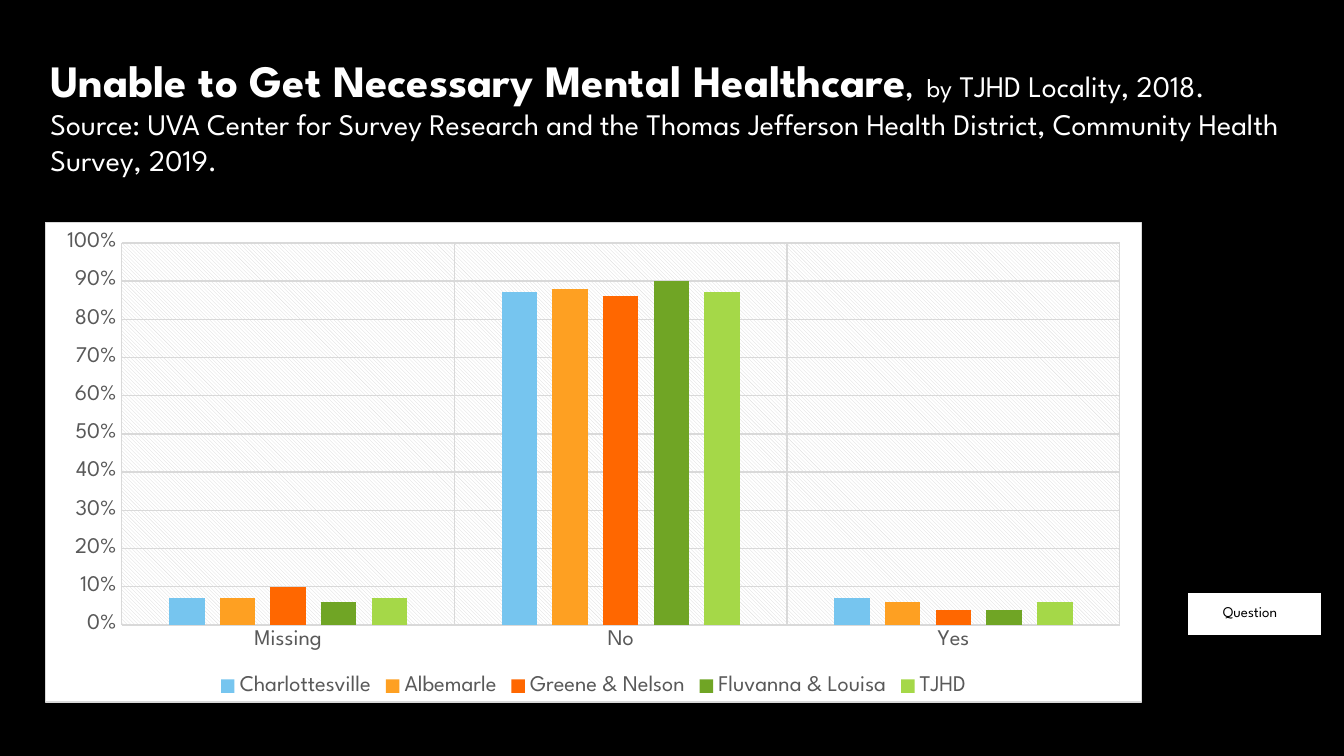
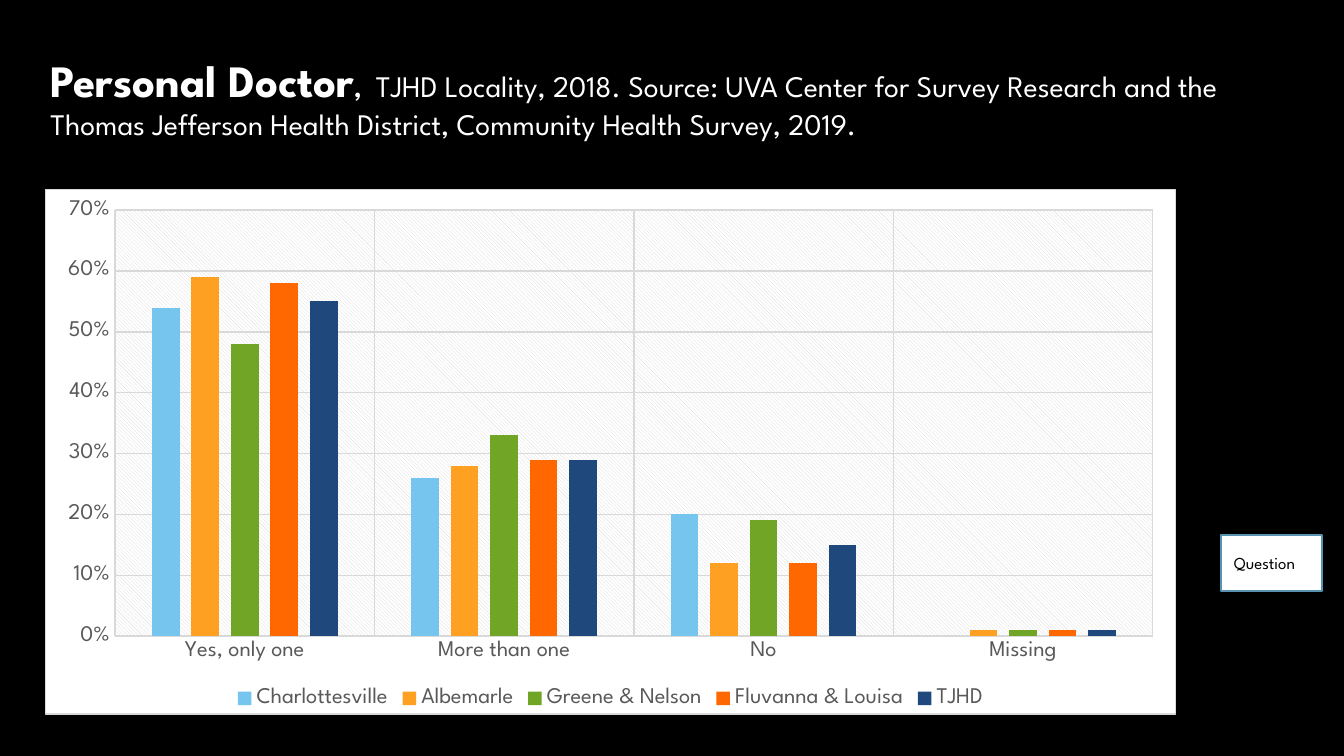
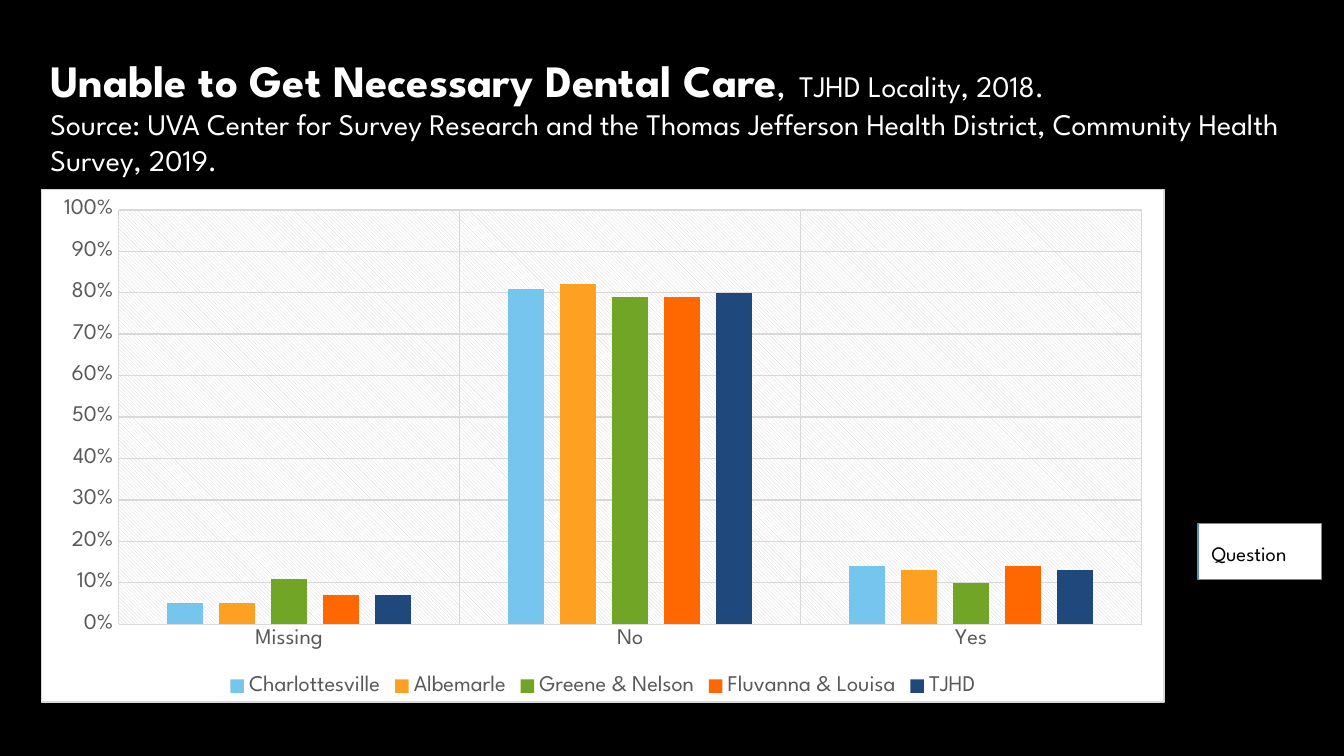
from dataclasses import dataclass

from pptx import Presentation
from pptx import util as u
from pptx.chart.data import CategoryChartData
from pptx.dml.color import RGBColor
from pptx.enum import chart as charts, shapes, text
from pptx.oxml import ns, parse_xml

# Shared look
FONT = "League Spartan"
BLACK, WHITE = "000000", "FFFFFF"
GRID, AXIS_TEXT, BUTTON_BLUE = "D9D9D9", "595959", "5792B1"
SKY, AMBER, ORANGE, GREEN = "76C5EF", "FEA022", "FF6700", "70A525"
LIME, NAVY = "A5D848", "1F497D"
WARM_FIRST = (SKY, AMBER, ORANGE, GREEN, LIME)
GREEN_FIRST = (SKY, AMBER, GREEN, ORANGE, NAVY)

LOCALITIES = ("Charlottesville", "Albemarle", "Greene & Nelson",
              "Fluvanna & Louisa", "TJHD")
SOURCE = ("Source: UVA Center for Survey Research and the Thomas Jefferson "
          "Health District, Community Health Survey, 2019.")


@dataclass(frozen=True)
class Box:
    left: float
    top: float
    width: float
    height: float

    def lengths(self) -> tuple:
        return tuple(u.Pt(n) for n in (self.left, self.top, self.width, self.height))


@dataclass(frozen=True)
class SurveyChart:
    box: Box
    categories: tuple
    values: tuple  # one row per locality
    colors: tuple
    maximum: float | None = None


@dataclass(frozen=True)
class QuestionButton:
    box: Box
    outline: str
    label: Box
    size: float


@dataclass(frozen=True)
class SurveySlide:
    topic: str
    details: tuple  # paragraphs of (text, size) runs
    chart: SurveyChart
    button: QuestionButton


TITLE_BOX = Box(24, 25, 672, 66.5)

SLIDES = (
    SurveySlide(
        "Unable to Get Necessary Mental Healthcare",
        (((" by", 14), (" TJHD Locality, 2018. " + SOURCE, 16)),),
        SurveyChart(
            Box(24, 119, 588, 257.5), ("Missing", "No", "Yes"),
            ((0.07, 0.87, 0.07), (0.07, 0.88, 0.06), (0.1, 0.86, 0.04),
             (0.06, 0.9, 0.04), (0.07, 0.87, 0.06)),
            WARM_FIRST, 1),
        QuestionButton(Box(636, 317, 72, 23.5), BLACK, Box(648, 319.5, 72, 17), 8),
    ),
    SurveySlide(
        "Personal Doctor",
        (((" TJHD Locality, 2018. " + SOURCE, 16),),),
        SurveyChart(
            Box(24, 101, 606, 282), ("Yes, only one", "More than one", "No", "Missing"),
            ((0.54, 0.26, 0.2, None), (0.59, 0.28, 0.12, 0.01),
             (0.48, 0.33, 0.19, 0.01), (0.58, 0.29, 0.12, 0.01),
             (0.55, 0.29, 0.15, 0.01)),
            GREEN_FIRST),
        QuestionButton(Box(654, 286.5, 54, 30), BUTTON_BLUE, Box(654, 292.5, 66, 18), 9),
    ),
    SurveySlide(
        "Unable to Get Necessary Dental Care",
        (((" TJHD Locality, 2018.", 16),), ((SOURCE, 16),)),
        SurveyChart(
            Box(22, 101, 602, 275.5), ("Missing", "No", "Yes"),
            ((0.05, 0.81, 0.14), (0.05, 0.82, 0.13), (0.11, 0.79, 0.1),
             (0.07, 0.79, 0.14), (0.07, 0.8, 0.13)),
            GREEN_FIRST, 1),
        QuestionButton(Box(642, 280.5, 66, 30), BUTTON_BLUE, Box(642, 286.5, 78, 21), 11),
    ),
)


# Formatting helpers
def rgb(color: str) -> RGBColor:
    return RGBColor.from_string(color)


def set_fill(fill, color: str) -> None:
    fill.solid()
    fill.fore_color.rgb = rgb(color)


def set_line(line, color: str, width: float) -> None:
    set_fill(line.fill, color)
    line.width = u.Pt(width)


def set_font(font, *, size: float, color: str, bold: bool = False) -> None:
    font.name, font.size, font.bold = FONT, u.Pt(size), bold
    font.color.rgb = rgb(color)


def add_text(paragraph, content: str, **style) -> None:
    run = paragraph.add_run()
    run.text = content
    set_font(run.font, **style)


# Title
def fill_title(slide, topic: str, details: tuple) -> None:
    title = slide.shapes.title
    title.left, title.top, title.width, title.height = TITLE_BOX.lengths()
    set_fill(title.fill, BLACK)
    frame = title.text_frame
    frame.auto_size = text.MSO_AUTO_SIZE.NONE
    frame.vertical_anchor = text.MSO_ANCHOR.TOP
    frame.margin_left = frame.margin_right = u.Pt(3)
    frame.margin_top = frame.margin_bottom = u.Pt(3)
    for index, runs in enumerate(details):
        paragraph = frame.add_paragraph() if index else frame.paragraphs[0]
        paragraph.alignment = text.PP_ALIGN.LEFT
        if index == 0:
            add_text(paragraph, topic, size=24, color=WHITE, bold=True)
            add_text(paragraph, ", ", size=14, color=WHITE, bold=True)
        for content, size in runs:
            add_text(paragraph, content, size=size, color=WHITE)


# Chart
def paint_chart_areas(chart) -> None:
    """Give the chart a white bordered area and a hatched plot area."""
    spaces = ns.nsdecls("c", "a")
    chart_space = chart._chartSpace
    chart_space.chart.addnext(parse_xml(
        f'<c:spPr {spaces}><a:solidFill><a:srgbClr val="{WHITE}"/></a:solidFill>'
        f'<a:ln w="{u.Pt(0.75)}"><a:solidFill><a:srgbClr val="{GRID}"/></a:solidFill>'
        f'</a:ln></c:spPr>'))
    chart_space.chart.plotArea.append(parse_xml(
        f'<c:spPr {spaces}><a:pattFill prst="ltDnDiag">'
        f'<a:fgClr><a:srgbClr val="{GRID}"/></a:fgClr>'
        f'<a:bgClr><a:srgbClr val="{WHITE}"/></a:bgClr></a:pattFill></c:spPr>'))


def add_survey_chart(slide, survey: SurveyChart) -> None:
    data = CategoryChartData(number_format="0%")
    data.categories = survey.categories
    for locality, values in zip(LOCALITIES, survey.values):
        data.add_series(locality, values)
    chart = slide.shapes.add_chart(
        charts.XL_CHART_TYPE.COLUMN_CLUSTERED, *survey.box.lengths(), data).chart
    set_font(chart.font, size=10, color=WHITE)
    chart.has_title = False
    paint_chart_areas(chart)

    plot = chart.plots[0]
    plot.gap_width, plot.overlap, plot.vary_by_categories = 267, -43, False
    for series, color in zip(plot.series, survey.colors):
        set_fill(series.format.fill, color)

    for axis in (chart.category_axis, chart.value_axis):
        axis.major_tick_mark = axis.minor_tick_mark = charts.XL_TICK_MARK.NONE
        axis.has_major_gridlines = True
        set_line(axis.major_gridlines.format.line, GRID, 0.75)
        set_font(axis.tick_labels.font, size=12, color=AXIS_TEXT)
    set_line(chart.category_axis.format.line, GRID, 0.75)
    value_axis = chart.value_axis
    value_axis.format.line.fill.background()
    value_axis.minimum_scale = 0
    value_axis.maximum_scale = survey.maximum
    value_axis.tick_labels.number_format = "0%"
    value_axis.tick_labels.number_format_is_linked = False

    chart.has_legend = True
    chart.legend.position = charts.XL_LEGEND_POSITION.BOTTOM
    chart.legend.include_in_layout = False
    set_font(chart.legend.font, size=12, color=AXIS_TEXT)


# Question button and its label
def add_question_button(slide, button: QuestionButton) -> None:
    shape = slide.shapes.add_shape(
        shapes.MSO_SHAPE.ACTION_BUTTON_CUSTOM, *button.box.lengths())
    shape.shadow.inherit = False
    set_fill(shape.fill, WHITE)
    set_line(shape.line, button.outline, 1)
    frame = slide.shapes.add_textbox(*button.label.lengths()).text_frame
    frame.word_wrap = True
    frame.auto_size = text.MSO_AUTO_SIZE.SHAPE_TO_FIT_TEXT
    add_text(frame.paragraphs[0], "Question", size=button.size, color=BLACK)


def main() -> None:
    presentation = Presentation()
    presentation.slide_width, presentation.slide_height = u.Pt(720), u.Pt(405)
    set_fill(presentation.slide_master.background.fill, BLACK)
    title_only = presentation.slide_layouts[5]
    for content in SLIDES:
        slide = presentation.slides.add_slide(title_only)
        fill_title(slide, content.topic, content.details)
        add_survey_chart(slide, content.chart)
        add_question_button(slide, content.button)
    presentation.save("out.pptx")


if __name__ == "__main__":
    main()
